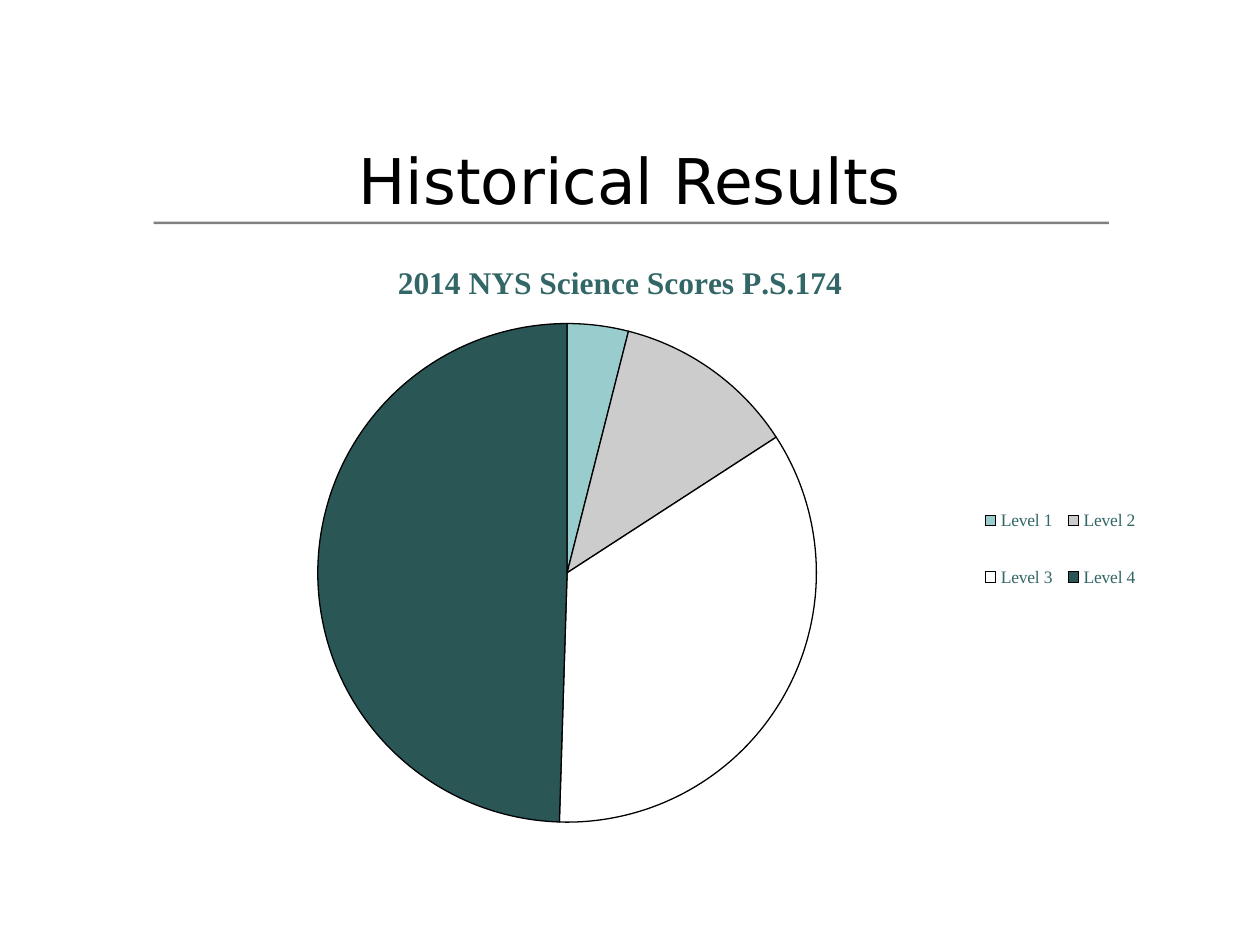
from pptx import Presentation, util as u
from pptx.chart.data import CategoryChartData
from pptx.dml.color import RGBColor
from pptx.enum import chart as ch, shapes, text
from pptx.oxml import parse_xml
from pptx.oxml.ns import nsdecls

BLACK = RGBColor(0x00, 0x00, 0x00)
GRAY = RGBColor(0x80, 0x80, 0x80)
TEAL = RGBColor(0x33, 0x66, 0x66)
SCORES = {
    "Level 1": (4, RGBColor(0x99, 0xCC, 0xCC)),
    "Level 2": (12, RGBColor(0xCC, 0xCC, 0xCC)),
    "Level 3": (35, RGBColor(0xFF, 0xFF, 0xFF)),
    "Level 4": (50, RGBColor(0x2A, 0x56, 0x56)),
}


def set_font(font, color, **values):
    for name, value in values.items():
        setattr(font, name, value)
    font.color.rgb = color


def add_title(s, words):
    tf = s.shapes.add_textbox(0, u.Inches(0.92), u.Inches(10), u.Inches(1)).text_frame
    tf.word_wrap = True
    tf.vertical_anchor = text.MSO_ANCHOR.MIDDLE
    p = tf.paragraphs[0]
    p.alignment = text.PP_ALIGN.CENTER
    r = p.add_run()
    r.text = words
    set_font(r.font, BLACK, name="DejaVu Sans", size=u.Pt(36))


def add_rule(s):
    sp = s.shapes.add_shape(shapes.MSO_SHAPE.RECTANGLE, u.Inches(1.22), u.Inches(1.76),
                            u.Inches(7.58), u.Inches(0.02))
    sp.shadow.inherit = False
    sp.fill.solid()
    sp.fill.fore_color.rgb = GRAY
    sp.line.fill.background()


def place(element, after, inner=False, **fractions):
    for old in element.findall(after[0].replace("c:", "{%s}" % element.nsmap["c"]) + "/none"):
        element.remove(old)
    for old in element.xpath("c:layout"):
        element.remove(old)
    target = '<c:layoutTarget val="inner"/>' if inner else ""
    modes = "".join(f'<c:{k}Mode val="edge"/>' for k in "xy")
    sizes = "".join(f'<c:{k} val="{v}"/>' for k, v in fractions.items())
    layout = parse_xml(f'<c:layout {nsdecls("c")}><c:manualLayout>{target}{modes}{sizes}'
                       '</c:manualLayout></c:layout>')
    before = element.xpath("|".join(after))
    if before:
        before[-1].addnext(layout)
    else:
        element.insert(0, layout)


def add_pie(s, title):
    data = CategoryChartData()
    data.categories = list(SCORES)
    data.add_series("Series 1", [value for value, _ in SCORES.values()])
    chart = s.shapes.add_chart(ch.XL_CHART_TYPE.PIE, u.Inches(0.67), u.Inches(1.9),
                               u.Inches(8.42), u.Inches(4.77), data).chart
    set_font(chart.font, TEAL, name="Times New Roman", size=u.Pt(10))

    p = chart.chart_title.text_frame.paragraphs[0]
    r = p.add_run()
    r.text = title
    set_font(r.font, TEAL, name="Times New Roman", size=u.Pt(18), bold=True)

    chart.has_legend = True
    chart.legend.position = ch.XL_LEGEND_POSITION.RIGHT
    chart.legend.include_in_layout = False

    plot = chart.plots[0]
    plot.vary_by_categories = True
    for i, (_, color) in enumerate(SCORES.values()):
        fmt = plot.series[0].points[i].format
        fmt.fill.solid()
        fmt.fill.fore_color.rgb = color
        fmt.line.color.rgb = BLACK
        fmt.line.width = u.Pt(0.75)

    space = chart.element.chart
    place(space.xpath("c:title")[0], ["c:tx"], x=0.29, y=0.03)
    place(space.xpath("c:plotArea")[0], ["c:none"], inner=True, x=0.22, y=0.14, w=0.47, h=0.83)
    place(space.xpath("c:legend")[0], ["c:legendPos"], x=0.84, y=0.39, w=0.16, h=0.25)


def main():
    """Build the science results slide."""
    prs = Presentation()
    prs.slide_width, prs.slide_height = u.Inches(10), u.Inches(7.5)
    s = prs.slides.add_slide(prs.slide_layouts[6])
    add_rule(s)
    add_title(s, "Historical Results")
    add_pie(s, "2014 NYS Science Scores P.S.174")
    prs.save("out.pptx")


if __name__ == "__main__":
    main()
